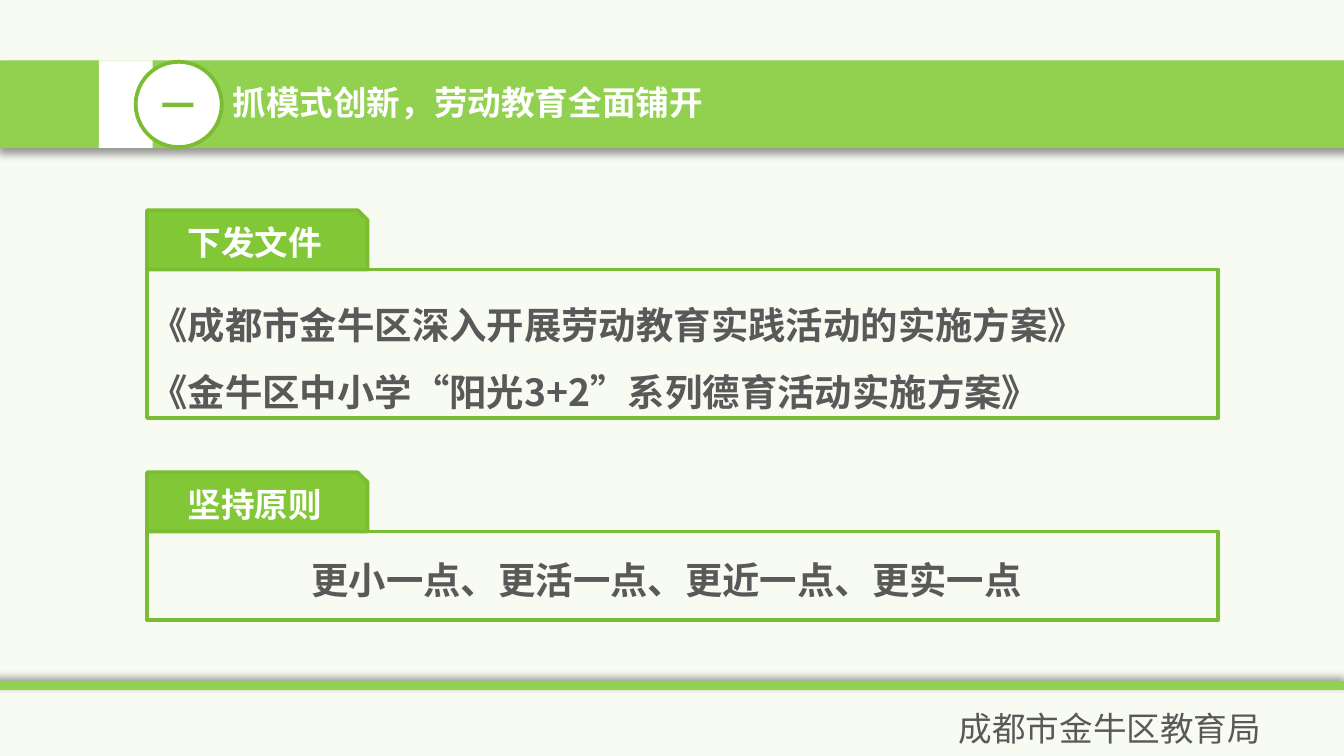
from lxml import etree
from pptx import Presentation
from pptx.dml.color import RGBColor
from pptx.enum.shapes import MSO_CONNECTOR, MSO_SHAPE
from pptx.enum.text import MSO_ANCHOR, MSO_AUTO_SIZE, PP_ALIGN
from pptx.oxml.ns import qn
from pptx.util import Inches, Pt

RECT, OVAL, TAB = MSO_SHAPE.RECTANGLE, MSO_SHAPE.OVAL, MSO_SHAPE.SNIP_1_RECTANGLE
STRAIGHT = MSO_CONNECTOR.STRAIGHT
LEFT, CENTER = PP_ALIGN.LEFT, PP_ALIGN.CENTER
TOP, MIDDLE = MSO_ANCHOR.TOP, MSO_ANCHOR.MIDDLE
TITLE_ONLY = 5

FONT = "Noto Sans CJK SC"
COLORS = {
    "paper": "F8FBF2",
    "band": "92D050",
    "tab": "82C836",
    "edge": "7ABC32",
    "text": "595959",
    "white": "FFFFFF",
    "shadow": "000000",
}
# The grid has square cells of a tenth of an inch
COLUMNS, ROWS = 100, 56.25
CELL = Inches(0.1)


def color(name):
    return RGBColor.from_string(COLORS[name])


def write(frame, text, size=18, ink="text", bold=True, align=LEFT,
          anchor=TOP, spacing=None, wrap=True, inset=1):
    """Fill a text frame, one paragraph for each line of text."""
    frame.word_wrap = wrap
    frame.auto_size = MSO_AUTO_SIZE.NONE
    frame.vertical_anchor = anchor
    frame.margin_left = int(inset * CELL)
    frame.margin_right = CELL
    frame.margin_top = frame.margin_bottom = CELL // 2
    for index, line in enumerate(text.split("\n")):
        paragraph = frame.add_paragraph() if index else frame.paragraphs[0]
        paragraph.alignment = align
        if spacing:
            paragraph.line_spacing = spacing
        run = paragraph.add_run()
        run.text = line
        run.font.size = Pt(size)
        run.font.bold = bold
        run.font.color.rgb = color(ink)
        run.font.name = FONT
        etree.SubElement(run.font._element, qn("a:ea"), typeface=FONT)


class SlideBuilder:
    def __init__(self, deck):
        self.slide = deck.slides.add_slide(deck.slide_layouts[TITLE_ONLY])
        self.shapes = self.slide.shapes
        fill = self.slide.background.fill
        fill.solid()
        fill.fore_color.rgb = color("paper")

    def box(self, *place):
        return [int(cells * CELL) for cells in place]

    def shape(self, kind, *place, fill=None, edge=None):
        shape = self.shapes.add_shape(kind, *self.box(*place))
        shape.shadow.inherit = False
        if fill:
            shape.fill.solid()
            shape.fill.fore_color.rgb = color(fill)
        else:
            shape.fill.background()
        if edge:
            shape.line.color.rgb = color(edge)
            shape.line.width = Pt(2)
        else:
            shape.line.fill.background()
        return shape

    def line(self, *ends, ink, width):
        line = self.shapes.add_connector(STRAIGHT, *self.box(*ends))
        line.line.color.rgb = color(ink)
        line.line.width = Pt(width)
        etree.SubElement(line._element.spPr, qn("a:effectLst"))
        return line

    def cast_shadow(self, shape, angle):
        effects = shape._element.spPr.find(qn("a:effectLst"))
        shadow = etree.SubElement(
            effects, qn("a:outerShdw"), blurRad=str(Pt(4)), dist=str(Pt(3)),
            dir=str(angle * 60000), algn="t", rotWithShape="0")
        tint = etree.SubElement(shadow, qn("a:srgbClr"), val=COLORS["shadow"])
        etree.SubElement(tint, qn("a:alpha"), val="40000")

    def text(self, text, *place, **style):
        write(self.shapes.add_textbox(*self.box(*place)).text_frame, text, **style)

    def title(self, text, *place, **style):
        title = self.shapes.title
        title.left, title.top, title.width, title.height = self.box(*place)
        self.shapes._spTree.append(title._element)  # bring above the band
        write(title.text_frame, text, **style)

    def panel(self, label, top, height, body, *place, **style):
        """A framed text under a labelled folder tab."""
        self.text(body, *place, size=20, **style)
        tab = self.shape(TAB, 10.95, top, 16.4, 4.4, fill="tab", edge="edge")
        write(tab.text_frame, label, ink="white", align=CENTER, anchor=MIDDLE)
        self.shape(RECT, 10.95, top + 4.4, 79.7, height, edge="edge")


def main():
    deck = Presentation()
    deck.slide_width, deck.slide_height = COLUMNS * CELL, int(ROWS * CELL)
    page = SlideBuilder(deck)

    # Header band and footer
    band = page.shape(RECT, -0.1, 4.5, 100.5, 6.5, fill="band")
    page.cast_shadow(band, 90)
    page.shape(RECT, 7.36, 4.5, 4, 6.5, fill="white")
    rule = page.line(-0.2, 51, 100.2, 51, ink="band", width=4.5)
    page.cast_shadow(rule, 225)
    page.text("成都市金牛区教育局", 70.35, 52.2, 24.7, 4, bold=False, wrap=False)

    # Title with its number
    page.title("抓模式创新，劳动教育全面铺开", 13.3, 5.25, 62.5, 5.1,
               ink="white", anchor=MIDDLE, spacing=0.9, inset=4)
    page.shape(OVAL, 10.1, 4.6, 6.4, 6.35, fill="white", edge="edge")
    page.text("一", 11, 5.8, 4.6, 4, ink="edge", wrap=False)

    # Panels
    page.panel("下发文件", 15.65, 11.05,
               "《成都市金牛区深入开展劳动教育实践活动的实施方案》\n"
               "《金牛区中小学“阳光3+2”系列德育活动实施方案》",
               10.2, 20.3, 83.6, 11.1, spacing=1.5)
    page.panel("坚持原则", 35.15, 6.6, "更小一点、更活一点、更近一点、更实一点",
               14.85, 41, 69.5, 4.1, align=CENTER)

    deck.save("out.pptx")


if __name__ == "__main__":
    main()
